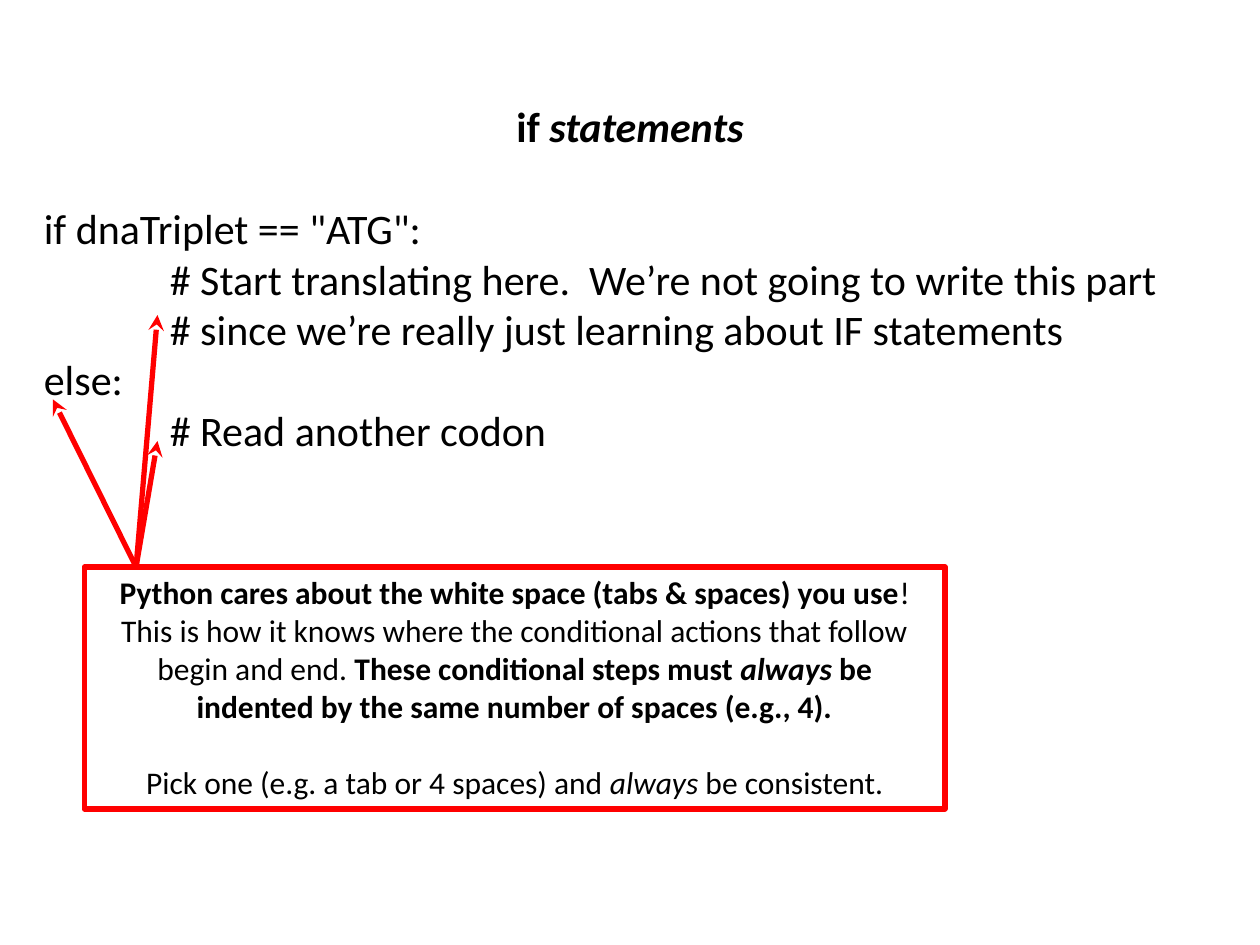
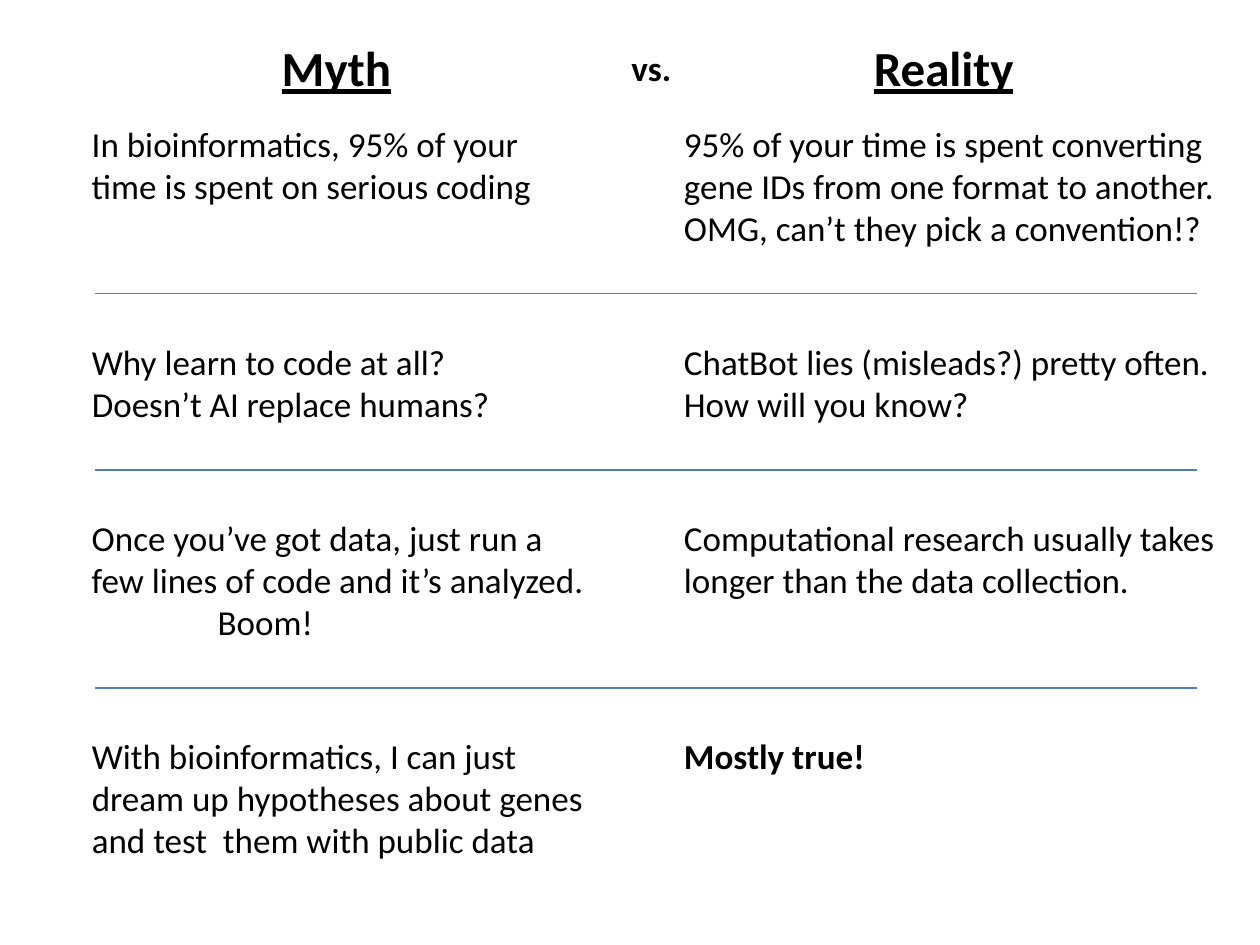
from lxml.etree import SubElement as Sub
from pptx import Presentation
from pptx.dml.color import RGBColor as RGB
from pptx.enum.shapes import MSO_CONNECTOR as Line, MSO_SHAPE as Shape
from pptx.enum.text import MSO_ANCHOR as Anchor, PP_ALIGN as Align
from pptx.oxml.ns import qn
from pptx.util import Inches, Pt

BLACK, RED, BLUE = RGB(0, 0, 0), RGB(255, 0, 0), RGB(0x4B, 0x7E, 0xBC)
FONT = "Calibri"
WIDE, HIGH = 10, 7.5

# A line is a list of (text, style) runs or a plain string;
# a leading tab indents the whole line by INDENT.
INDENT = 1
TITLE = [("if ", "b"), ("statements", "bi")]
CODE = [
    'if dnaTriplet == "ATG":',
    "\t# Start translating here.  We’re not going to write this part",
    "\t# since we’re really just learning about IF statements",
    "else:",
    "\t# Read another codon",
]
NOTE = [
    [("Python cares about the white space (tabs & spaces) you use", "b"), ("!", "")],
    [("This is how it knows where the conditional actions that follow begin and end. ", ""),
     ("These conditional steps must ", "b"), ("always", "bi"),
     (" be indented by the same number of spaces (e.g., 4).", "b")],
    [("Pick one (e.g. a tab or 4 spaces) and ", ""), ("always", "i"),
     (" be consistent.", "")],
]
NOTE_BOX = (0.67, 4.5, 6.83, 1.92)
SOURCE = (1.08, 4.5)
TARGETS = [(1.25, 3.5), (1.25, 2.5), (0.42, 3.17)]

# text, style, size, middle, top
HEADS = [("Myth", "bu", 28, 2.67, 0.25), ("vs.", "b", 20, 5.17, 0.32),
         ("Reality", "bu", 28, 7.49, 0.25)]
# lines of height, width of the myth, myth, reality
ROWS = [
    (3, 4.03, ["In bioinformatics, 95% of your time is spent on serious coding"],
     ["95% of your time is spent converting gene IDs from one format to another. "
      "OMG, can’t they pick a convention!?"]),
    (2, 3.45, ["Why learn to code at all? Doesn’t AI replace humans?"],
     ["ChatBot lies (misleads?) pretty often. How will you know?"]),
    (3, 4.13, ["Once you’ve got data, just run a few lines of code and it’s analyzed.",
               "\tBoom!"],
     ["Computational research usually takes longer than the data collection."]),
    (3, 4.12, ["With bioinformatics, I can just dream up hypotheses about genes "
               "and test  them with public data"],
     [[("Mostly true!", "b")]]),
]
MYTH_X, REAL_X, REAL_W = 0.63, 5.33, 4.5
ROW_TOP, LINE_H, PAD, GAP = 0.92, 0.33, 0.1, 0.64
RULE_X, RULE_END = 0.75, 9.5


def write(frame, lines, size, align=Align.LEFT):
    frame.word_wrap = True
    frame.vertical_anchor = Anchor.TOP
    for n, line in enumerate(lines):
        para = frame.paragraphs[0] if n == 0 else frame.add_paragraph()
        para.alignment = align
        font = para.font
        font.name, font.size, font.color.rgb = FONT, Pt(size), BLACK
        if isinstance(line, str):
            if line.startswith("\t"):
                para._p.get_or_add_pPr().set("marL", str(Inches(INDENT)))
            line = [(line.lstrip("\t"), "")]
        for text, style in line:
            run = para.add_run()
            run.text = text
            run.font.bold = "b" in style
            run.font.italic = "i" in style
            run.font.underline = "u" in style


def place(shape, box):
    shape.left, shape.top, shape.width, shape.height = map(Inches, box)


def add_text(slide, box, lines, size, align=Align.LEFT):
    write(slide.shapes.add_textbox(*map(Inches, box)).text_frame, lines, size, align)


def draw(slide, start, end, color, width, head=False):
    line = slide.shapes.add_connector(Line.STRAIGHT, *map(Inches, start + end))
    line.line.color.rgb, line.line.width = color, Pt(width)
    if head:
        Sub(line.line._get_or_add_ln(), qn("a:tailEnd"), type="stealth")
    Sub(line._element.spPr, qn("a:effectLst"))


def build_if(deck):
    slide = deck.slides.add_slide(deck.slide_layouts[5])
    left, top, width = 0.25, 0.75, 0.95 * WIDE
    title = slide.shapes.title
    place(title, (left, top, width, 0.5))
    write(title.text_frame, [TITLE], 24, Align.CENTER)
    add_text(slide, (left, top + 0.81, width, 2.1), CODE, 24)

    note = slide.shapes.add_shape(Shape.RECTANGLE, *map(Inches, NOTE_BOX))
    note.shadow.inherit = False
    note.fill.background()
    note.line.color.rgb, note.line.width = RED, Pt(3)
    write(note.text_frame, NOTE, 18, Align.CENTER)
    note.text_frame.paragraphs[-1].space_before = Pt(22)
    for target in TARGETS:
        draw(slide, SOURCE, target, RED, 3, head=True)


def build_myths(deck):
    slide = deck.slides.add_slide(deck.slide_layouts[6])
    for text, style, size, mid, top in HEADS:
        add_text(slide, (mid - 0.75, top, 1.5, 0.57), [[(text, style)]],
                 size, Align.CENTER)
    top = ROW_TOP
    for n, (count, width, myth, real) in enumerate(ROWS):
        if n:
            rule = top - GAP / 2
            draw(slide, (RULE_X, rule), (RULE_END, rule), BLUE, 0.75)
        tall = count * LINE_H + PAD
        add_text(slide, (MYTH_X, top, width, tall), myth, 20)
        add_text(slide, (REAL_X, top, REAL_W, tall), real, 20)
        top += tall + GAP


def main():
    deck = Presentation()
    deck.slide_width, deck.slide_height = Inches(WIDE), Inches(HIGH)
    build_if(deck)
    build_myths(deck)
    deck.save("out.pptx")


if __name__ == "__main__":
    main()
